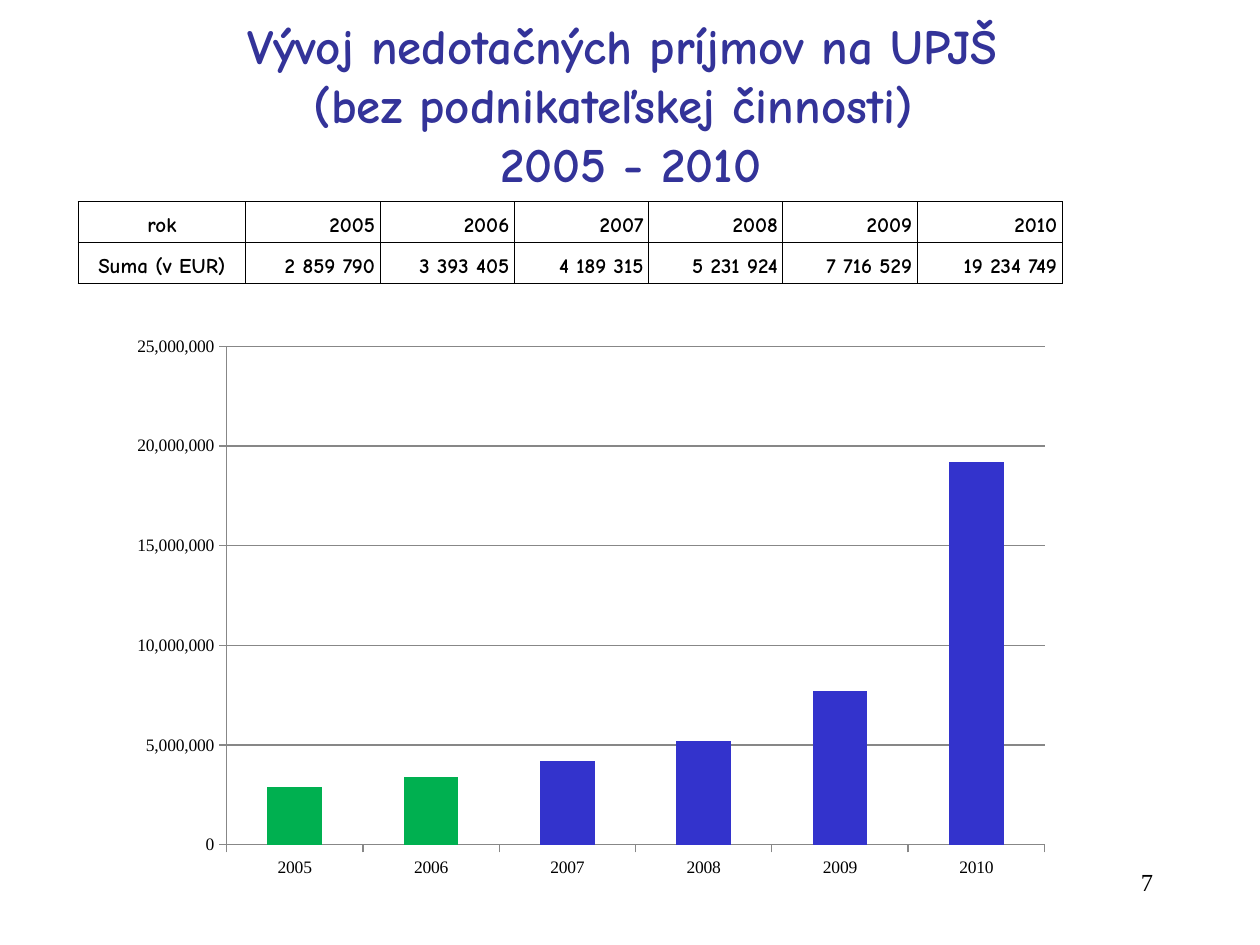
from lxml import etree
from pptx import Presentation
from pptx.chart.data import CategoryChartData
from pptx.dml.color import RGBColor
from pptx.enum import chart as charts, text
from pptx.oxml.ns import qn
from pptx.util import Inches, Pt

NAVY = RGBColor(0x33, 0x33, 0x99)
BLUE = RGBColor(0x33, 0x33, 0xCC)
GREEN = RGBColor(0x00, 0xB0, 0x50)
GREY = RGBColor(0x87, 0x87, 0x87)
BLACK = RGBColor(0, 0, 0)
HEADING_FONT, PLAIN_FONT = "Comic Neue", "Times New Roman"

YEARS = ["2005", "2006", "2007", "2008", "2009", "2010"]
SUMS = ["2 859 790", "3 393 405", "4 189 315", "5 231 924", "7 716 529", "19 234 749"]


def write(para, words, align, color, **font):
    para.alignment = align
    span = para.add_run()
    span.text = words
    span.font.color.rgb = color
    for name, value in font.items():
        setattr(span.font, name, value)


def draw_borders(cell):
    properties = cell._tc.get_or_add_tcPr()
    for position, side in enumerate(("a:lnL", "a:lnR", "a:lnT", "a:lnB")):
        line = etree.Element(qn(side), w=str(Pt(0.5)))
        fill = etree.SubElement(line, qn("a:solidFill"))
        etree.SubElement(fill, qn("a:srgbClr"), val=str(BLACK))
        properties.insert(position, line)


deck = Presentation()
deck.slide_width, deck.slide_height = Inches(10), Inches(7.5)
page = deck.slides.add_slide(deck.slide_layouts[5])

# Title
title = page.shapes.title
title.left, title.top = Inches(0.59), Inches(0.07)
title.width, title.height = Inches(8.83), Inches(1.51)
frame = title.text_frame
frame.auto_size = text.MSO_AUTO_SIZE.NONE
lines = ["Vývoj nedotačných príjmov na UPJŠ ", "(bez podnikateľskej činnosti)  ", "2005 - 2010"]
for index, words in enumerate(lines):
    para = frame.add_paragraph() if index else frame.paragraphs[0]
    write(para, words, text.PP_ALIGN.CENTER, NAVY, name=HEADING_FONT, size=Pt(28), bold=True)

# Table of yearly sums: the middle columns share what the outer two leave
rows = [["rok"] + YEARS, ["Suma (v EUR)"] + SUMS]
total, first, last = 7.81, 1.33, 1.15
widths = [first] + [(total - first - last) / 5] * 5 + [last]
table = page.shapes.add_table(2, 7, Inches(0.62), Inches(1.6), Inches(total), Inches(0.65)).table
table.first_row = table.horz_banding = False
for column, width in zip(table.columns, widths):
    column.width = Inches(width)
cell_format = {
    "vertical_anchor": text.MSO_ANCHOR.BOTTOM,
    "margin_left": Inches(0.04),
    "margin_right": Inches(0.04),
    "margin_top": 0,
    "margin_bottom": Inches(0.04),
}
for r, row in enumerate(rows):
    for c, words in enumerate(row):
        cell = table.cell(r, c)
        for name, value in cell_format.items():
            setattr(cell, name, value)
        cell.fill.background()
        draw_borders(cell)
        align = text.PP_ALIGN.RIGHT if c else text.PP_ALIGN.CENTER
        write(cell.text_frame.paragraphs[0], words, align, BLACK,
              name=HEADING_FONT, size=Pt(12), bold=True)

# Column chart of the same sums, rounded to hundred thousands
data = CategoryChartData(number_format="#,##0")
data.categories = YEARS
data.add_series("Suma (v EUR)", [round(int(amount.replace(" ", "")), -5) for amount in SUMS])
chart = page.shapes.add_chart(
    charts.XL_CHART_TYPE.COLUMN_CLUSTERED,
    Inches(0.94), Inches(2.58), Inches(7.5), Inches(4.47), data).chart
chart.has_legend = chart.has_title = False
chart.font.name, chart.font.size = PLAIN_FONT, Pt(10)
chart.font.color.rgb = BLACK

plot = chart.plots[0]
plot.gap_width = 150
plot.vary_by_categories = False
series = plot.series[0]
series.format.fill.solid()
series.format.fill.fore_color.rgb = BLUE
for index in (0, 1):
    fill = series.points[index].format.fill
    fill.solid()
    fill.fore_color.rgb = GREEN

amounts = chart.value_axis
amounts.minimum_scale, amounts.maximum_scale, amounts.major_unit = 0, 25000000, 5000000
amounts.has_major_gridlines = True
amounts.major_gridlines.format.line.color.rgb = GREY
amounts.tick_labels.number_format = "#,##0"
amounts.tick_labels.number_format_is_linked = False
for axis in (amounts, chart.category_axis):
    axis.major_tick_mark = charts.XL_TICK_MARK.OUTSIDE
    axis.format.line.color.rgb = GREY

# Page number
box = page.shapes.add_textbox(Inches(7.17), Inches(6.83), Inches(2.08), Inches(0.5))
box.text_frame.word_wrap = True
write(box.text_frame.paragraphs[0], "7", text.PP_ALIGN.RIGHT, BLACK, name=PLAIN_FONT, size=Pt(14))

deck.save("out.pptx")
